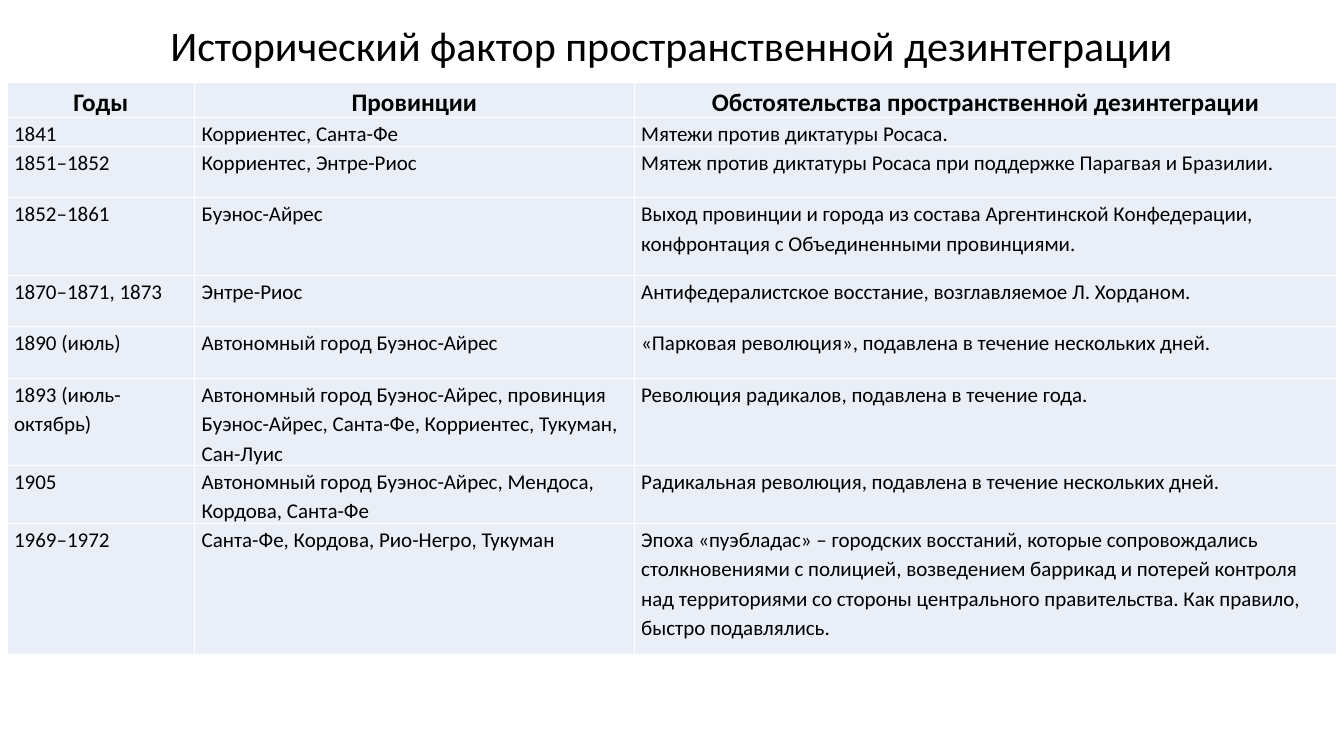
from pptx import Presentation, util as u
from pptx.dml.color import RGBColor
from pptx.enum import text

COLORS = {"ink": "000000", "cell": "EAEFF7"}
HEADINGS = ("Годы", "Провинции", "Обстоятельства пространственной дезинтеграции")
EVENTS = [
    ("1841", "Корриентес, Санта-Фе", "Мятежи против диктатуры Росаса."),
    ("1851–1852", "Корриентес, Энтре-Риос",
     "Мятеж против диктатуры Росаса при поддержке Парагвая и Бразилии."),
    ("1852–1861", "Буэнос-Айрес",
     "Выход провинции и города из состава Аргентинской Конфедерации, "
     "конфронтация с Объединенными провинциями."),
    ("1870–1871, 1873", "Энтре-Риос",
     "Антифедералистское восстание, возглавляемое Л. Хорданом."),
    ("1890 (июль)", "Автономный город Буэнос-Айрес",
     "«Парковая революция», подавлена в течение нескольких дней."),
    ("1893 (июль-октябрь)",
     "Автономный город Буэнос-Айрес, провинция Буэнос-Айрес, "
     "Санта-Фе, Корриентес, Тукуман, Сан-Луис",
     "Революция радикалов, подавлена в течение года."),
    ("1905", "Автономный город Буэнос-Айрес, Мендоса, Кордова, Санта-Фе",
     "Радикальная революция, подавлена в течение нескольких дней."),
    ("1969–1972", "Санта-Фе, Кордова, Рио-Негро, Тукуман",
     "Эпоха «пуэбладас» – городских восстаний, которые сопровождались "
     "столкновениями с полицией, возведением баррикад и потерей контроля "
     "над территориями со стороны центрального правительства. "
     "Как правило, быстро подавлялись."),
]
COLUMN_WIDTHS = (1.86, 4.36, 6.97)
ROW_HEIGHTS = (0.25, 0.25, 0.51, 0.77, 0.51, 0.51, 0.77, 0.51, 1.3)


class SlideBuilder:
    font = "Calibri"

    def __init__(self, page):
        self.page = page

    def set_text(self, frame, words, size, spacing, centered=False, bold=False):
        frame.text = words
        frame.word_wrap = True
        para = frame.paragraphs[0]
        para.line_spacing = spacing
        para.alignment = text.PP_ALIGN.CENTER if centered else text.PP_ALIGN.LEFT
        for span in para.runs:
            span.font.name = self.font
            span.font.size = u.Pt(size)
            span.font.bold = bold
            span.font.color.rgb = RGBColor.from_string(COLORS["ink"])

    def title(self, words, left, top, width, height):
        box = self.page.shapes.add_textbox(*map(u.Inches, (left, top, width, height)))
        box.text_frame.vertical_anchor = text.MSO_ANCHOR.MIDDLE
        self.set_text(box.text_frame, words, 30, 0.9, centered=True)

    def table(self, rows, left, top, widths, heights):
        area = map(u.Inches, (left, top, sum(widths), sum(heights)))
        table = self.page.shapes.add_table(len(rows), len(widths), *area).table
        table.first_row = False
        table.horz_banding = False
        for column, width in zip(table.columns, widths):
            column.width = u.Inches(width)
        for index, (row, height) in enumerate(zip(table.rows, heights)):
            row.height = u.Inches(height)
            for cell, words in zip(row.cells, rows[index]):
                self.fill_cell(cell, words, heading=index == 0)

    def fill_cell(self, cell, words, heading):
        cell.margin_left = cell.margin_right = u.Inches(0.07)
        cell.margin_top = cell.margin_bottom = 0
        cell.fill.solid()
        cell.fill.fore_color.rgb = RGBColor.from_string(COLORS["cell"])
        self.set_text(cell.text_frame, words, 18 if heading else 15, 1.15,
                      centered=heading, bold=heading)


def main():
    deck = Presentation()
    deck.slide_width, deck.slide_height = u.Inches(13.33), u.Inches(7.5)
    builder = SlideBuilder(deck.slides.add_slide(deck.slide_layouts[6]))
    builder.title("Исторический фактор пространственной дезинтеграции", 0, 0, 13.33, 0.96)
    builder.table([HEADINGS, *EVENTS], 0.07, 0.82, COLUMN_WIDTHS, ROW_HEIGHTS)
    deck.save("out.pptx")


if __name__ == "__main__":
    main()
